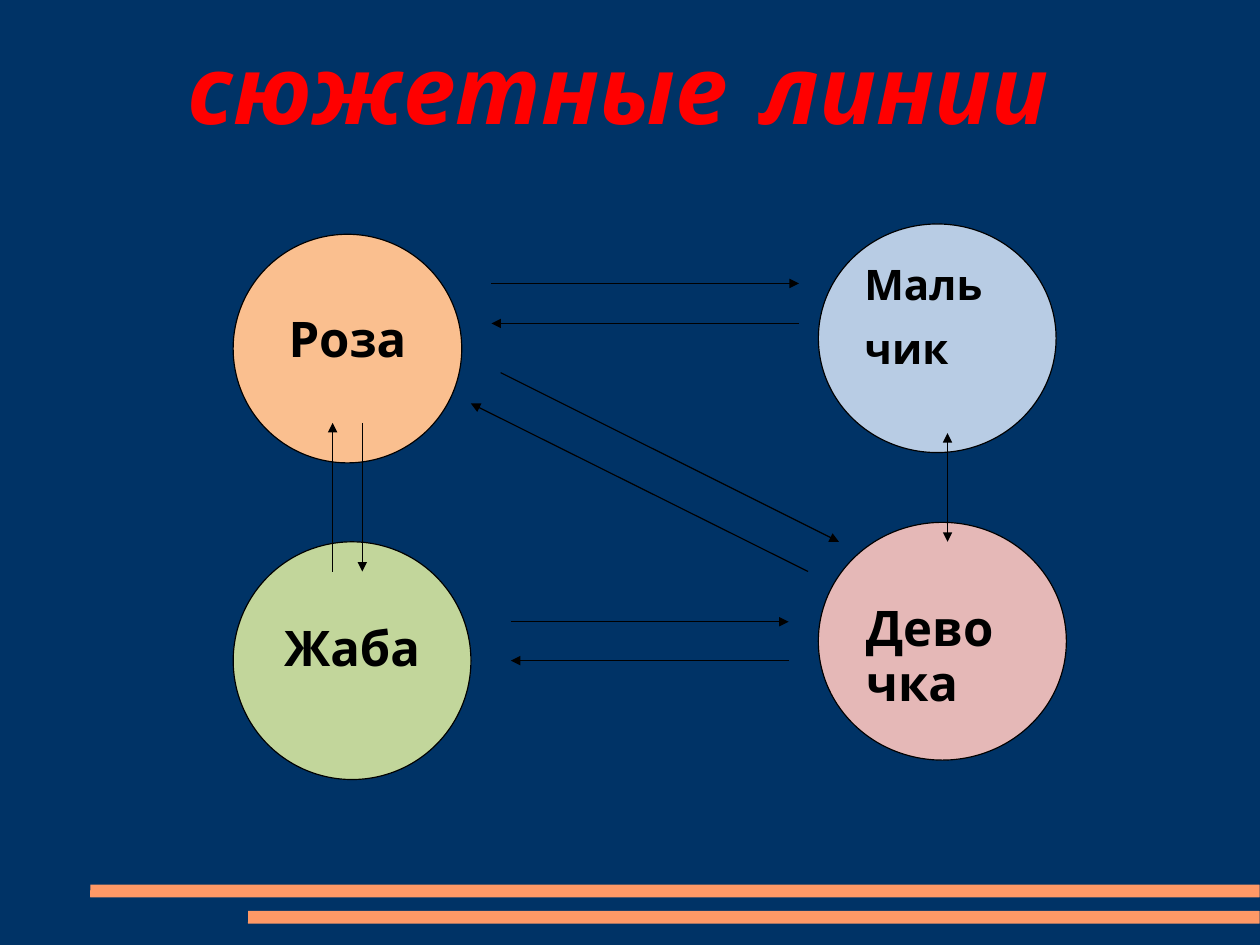
from pptx import Presentation
from pptx.dml.color import RGBColor
from pptx.enum.shapes import MSO_CONNECTOR as CONN, MSO_SHAPE as SHAPE
from pptx.enum.text import MSO_ANCHOR as ANCHOR, MSO_AUTO_SIZE as AUTO, PP_ALIGN as ALIGN
from pptx.oxml.ns import qn
from pptx.util import Cm, Inches, Pt
from lxml.etree import SubElement

FONT = "Comic Neue"
BLACK = "000000"


def color(fmt, value):
    """Make a fill or font colour solid with a hex value."""
    if hasattr(fmt, "solid"):
        fmt.solid()
        fmt.fore_color.rgb = RGBColor.from_string(value)
    else:
        fmt.color.rgb = RGBColor.from_string(value)


class Diagram:
    def __init__(self, prs):
        self.s = prs.slides.add_slide(prs.slide_layouts[5])
        color(self.s.background.fill, "003366")

    def text(self, tf, text, size, font_color, align, italic=None):
        tf.text = text
        tf.word_wrap = True
        tf.auto_size = AUTO.NONE
        for p in tf.paragraphs:
            p.alignment = align
            p.line_spacing = 0.93
            for r in p.runs:
                r.font.name, r.font.size = FONT, Pt(size)
                r.font.bold, r.font.italic = True, italic
                color(r.font, font_color)

    def title(self, text, x, y, w, h):
        sp = self.s.shapes.title
        sp.left, sp.top, sp.width, sp.height = map(Inches, (x, y, w, h))
        tf = sp.text_frame
        self.text(tf, text, 59.5, "FF0000", ALIGN.CENTER, italic=True)
        tf.vertical_anchor = ANCHOR.BOTTOM
        tf.margin_left = tf.margin_right = tf.margin_top = tf.margin_bottom = 0

    def shape(self, kind, x, y, w, h, fill):
        sp = self.s.shapes.add_shape(kind, *map(Inches, (x, y, w, h)))
        sp.shadow.inherit = False
        color(sp.fill, fill)
        return sp

    def bar(self, x, y, w):
        sp = self.shape(SHAPE.ROUNDED_RECTANGLE, x, y, w, 0.11, "FF9966")
        sp.adjustments[0] = 0.02
        sp.line.fill.background()

    def circle(self, text, x, y, w, h, fill, size=30.9, align=ALIGN.CENTER, top=0.4):
        sp = self.shape(SHAPE.OVAL, x, y, w, h, fill)
        color(sp.line.fill, BLACK)
        sp.line.width = Pt(0.75)
        tf = sp.text_frame
        self.text(tf, text, size, BLACK, align)
        tf.vertical_anchor = ANCHOR.TOP
        tf.margin_top = Inches(top)
        for p in tf.paragraphs:
            p.space_after = Pt(11)

    def arrow(self, x1, y1, x2, y2, width=0.75, both=False):
        c = self.s.shapes.add_connector(CONN.STRAIGHT, *map(Inches, (x1, y1, x2, y2)))
        color(c.line.fill, BLACK)
        c.line.width = Pt(width)
        ln = c.line._get_or_add_ln()
        for end in ("a:headEnd", "a:tailEnd") if both else ("a:tailEnd",):
            SubElement(ln, qn(end), type="triangle")
        SubElement(c._element.spPr, qn("a:effectLst"))


def main():
    prs = Presentation()
    prs.slide_width, prs.slide_height = Cm(28), Cm(21)
    d = Diagram(prs)

    d.bar(0.79, 7.74, 10.23)
    d.bar(2.17, 7.97, 8.85)
    d.title("сюжетные линии ", 0.83, 0.4, 9.46, 0.87)

    d.circle("Роза", 2.04, 2.05, 2, 2, "FABF8F")
    d.circle("Маль\nчик", 7.16, 1.96, 2.08, 2, "B8CCE4", 26.5, ALIGN.LEFT, 0.05)
    d.circle("Жаба", 2.04, 4.74, 2.08, 2.08, "C2D69B")
    d.circle("Девочка", 7.16, 4.57, 2.17, 2.08, "E5B8B7", align=ALIGN.LEFT)

    # Роза – Мальчик
    d.arrow(4.3, 2.48, 6.99, 2.48, width=1)
    d.arrow(6.99, 2.83, 4.3, 2.83)
    # Роза – Девочка
    d.arrow(4.38, 3.26, 7.34, 4.74)
    d.arrow(7.07, 5, 4.12, 3.53)
    # Жаба – Девочка
    d.arrow(4.47, 5.44, 6.9, 5.44)
    d.arrow(6.9, 5.78, 4.47, 5.78)
    # Мальчик – Девочка
    d.arrow(8.29, 3.79, 8.29, 4.74, both=True)
    # Роза – Жаба
    d.arrow(3.17, 3.7, 3.17, 5)
    d.arrow(2.91, 5, 2.91, 3.7)

    prs.save("out.pptx")


if __name__ == "__main__":
    main()
